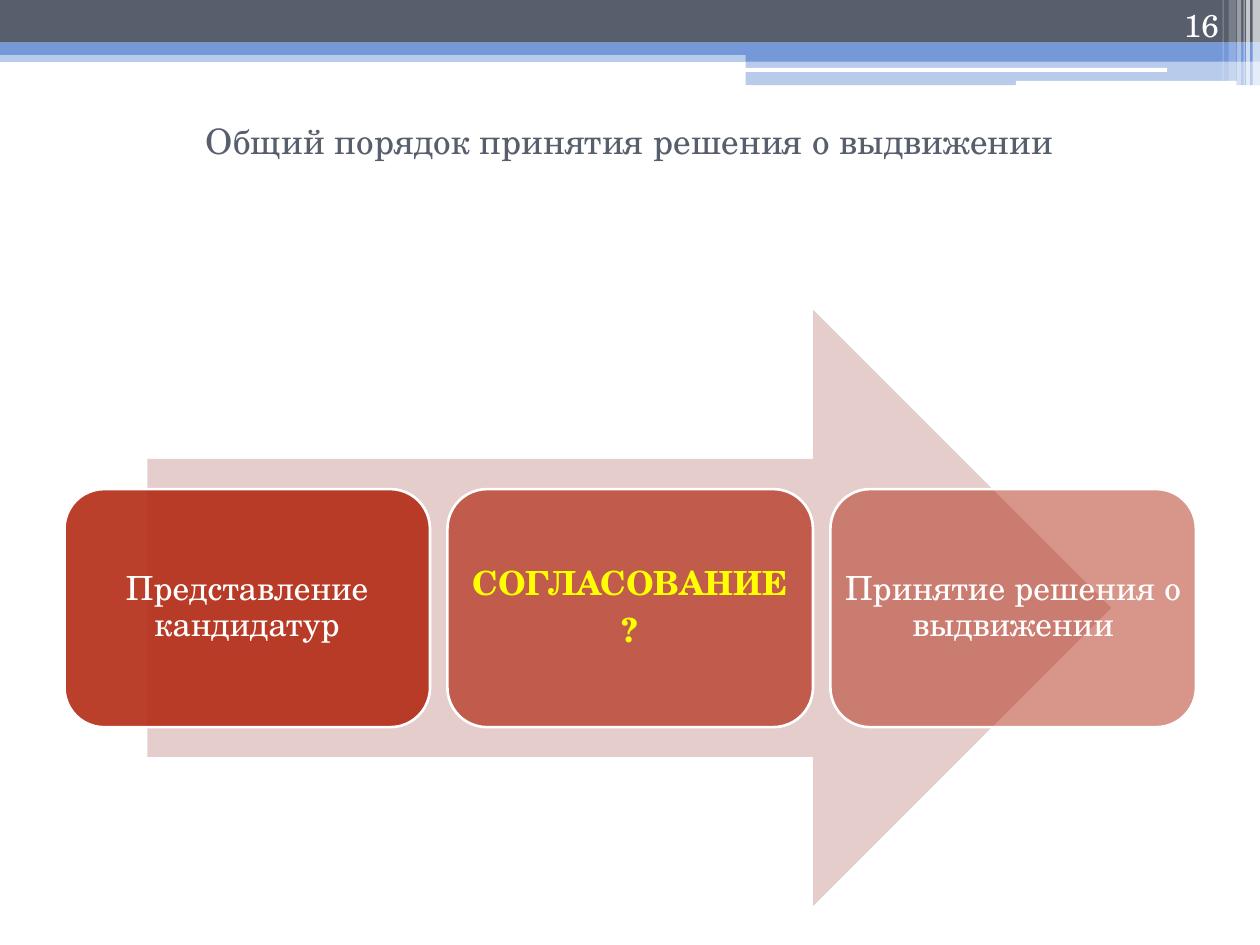
from pptx import Presentation
from pptx.dml.color import RGBColor
from pptx.enum.shapes import MSO_SHAPE as Shape
from pptx.enum.text import MSO_ANCHOR as Anchor, PP_ALIGN as Align
from pptx.oxml.ns import qn
from pptx.util import Cm, Pt
from lxml.etree import SubElement

COLORS = {"slate": "575F6D", "blue": "7598D9", "white": "FFFFFF",
          "pink": "E5CDCC", "red": "B32C16", "yellow": "FFFF00"}
FONT = "TeX Gyre Schola"


def add_filled(kind, bounds, color, opacity=100):
    shape = page.shapes.add_shape(kind, *map(Cm, bounds))
    shape.shadow.inherit = False
    shape.fill.solid()
    shape.fill.fore_color.rgb = RGBColor.from_string(COLORS[color])
    shape.line.fill.background()
    if opacity < 100:
        tint = shape.fill._xPr.find(qn("a:solidFill"))[0]
        SubElement(tint, qn("a:alpha"), val=str(opacity * 1000))
    return shape


def write_text(shape, lines, size, color, align, anchor, inset=(0.25, 0.13), bold=False, **spacing):
    frame = shape.text_frame
    frame.text = "\n".join(lines)
    side, edge = map(Cm, inset)
    layout = {"word_wrap": True, "vertical_anchor": anchor, "margin_left": side,
              "margin_right": side, "margin_top": edge, "margin_bottom": edge}
    for name, value in layout.items():
        setattr(frame, name, value)
    for para in frame.paragraphs:
        for name, value in {"alignment": align, **spacing}.items():
            setattr(para, name, value)
        for span in para.runs:
            for name, value in {"name": FONT, "size": Pt(size), "bold": bold}.items():
                setattr(span.font, name, value)
            span.font.color.rgb = RGBColor.from_string(COLORS[color])


deck = Presentation()
deck.slide_width, deck.slide_height = Cm(25.4), Cm(19.05)
page = deck.slides.add_slide(deck.slide_layouts[5])

bands = [
    (0, 1.02, 25.4, 0.23, "blue", 50),
    (0, 0, 25.4, 0.86, "slate", 100),
    (0, 0.86, 25.4, 0.25, "blue", 100),
    (15.03, 0.99, 10.37, 0.25, "blue", 100),
    (15.03, 1.23, 10.37, 0.49, "blue", 50),
]
for *bounds, color, opacity in bands:
    add_filled(Shape.RECTANGLE, bounds, color, opacity)

for bounds in [(15.02, 1.37, 8.51, 0.08), (20.48, 1.63, 4.45, 0.1)]:
    add_filled(Shape.ROUNDED_RECTANGLE, bounds, "white")

stripes = [(25.25, 0.15, 1.73, 65), (25.12, 0.08, 1.73, 65), (25.07, 0.02, 1.73, 60),
           (24.94, 0.08, 1.73, 40), (24.77, 0.15, 1.63, 20), (24.65, 0.02, 1.63, 30)]
for left, width, height, opacity in stripes:
    add_filled(Shape.RECTANGLE, (left, 0, width, height), "white", opacity)

title = page.shapes.title
title_bounds = {"left": 1.27, "top": 1.93, "width": 22.86, "height": 1.8}
for name, value in title_bounds.items():
    setattr(title, name, Cm(value))
write_text(title, ["Общий порядок принятия решения о выдвижении"], 20, "slate",
           Align.CENTER, Anchor.MIDDLE)

number = page.shapes.add_textbox(Cm(22.71), Cm(0), Cm(2.11), Cm(1.02))
write_text(number, ["16"], 18, "white", Align.RIGHT, Anchor.BOTTOM)

add_filled(Shape.RIGHT_ARROW, (2.97, 6.25, 19.43, 12.01), "pink")

steps = [
    (["Представление кандидатур"], 90, "white", False),
    (["СОГЛАСОВАНИЕ", "?"], 70, "yellow", True),
    (["Принятие решения о выдвижении"], 50, "white", False),
]
first_left, step_pitch = 1.3, 7.72
for index, (lines, opacity, color, bold) in enumerate(steps):
    left = first_left + index * step_pitch
    box = add_filled(Shape.ROUNDED_RECTANGLE, (left, 9.86, 7.37, 4.8), "red", opacity)
    box.line.color.rgb = RGBColor.from_string(COLORS["white"])
    box.line.width = Pt(1.5)
    write_text(box, lines, 19, color, Align.CENTER, Anchor.MIDDLE, (0.0, 0.2), bold,
               line_spacing=0.9, space_after=Pt(6.65))

deck.save("out.pptx")
